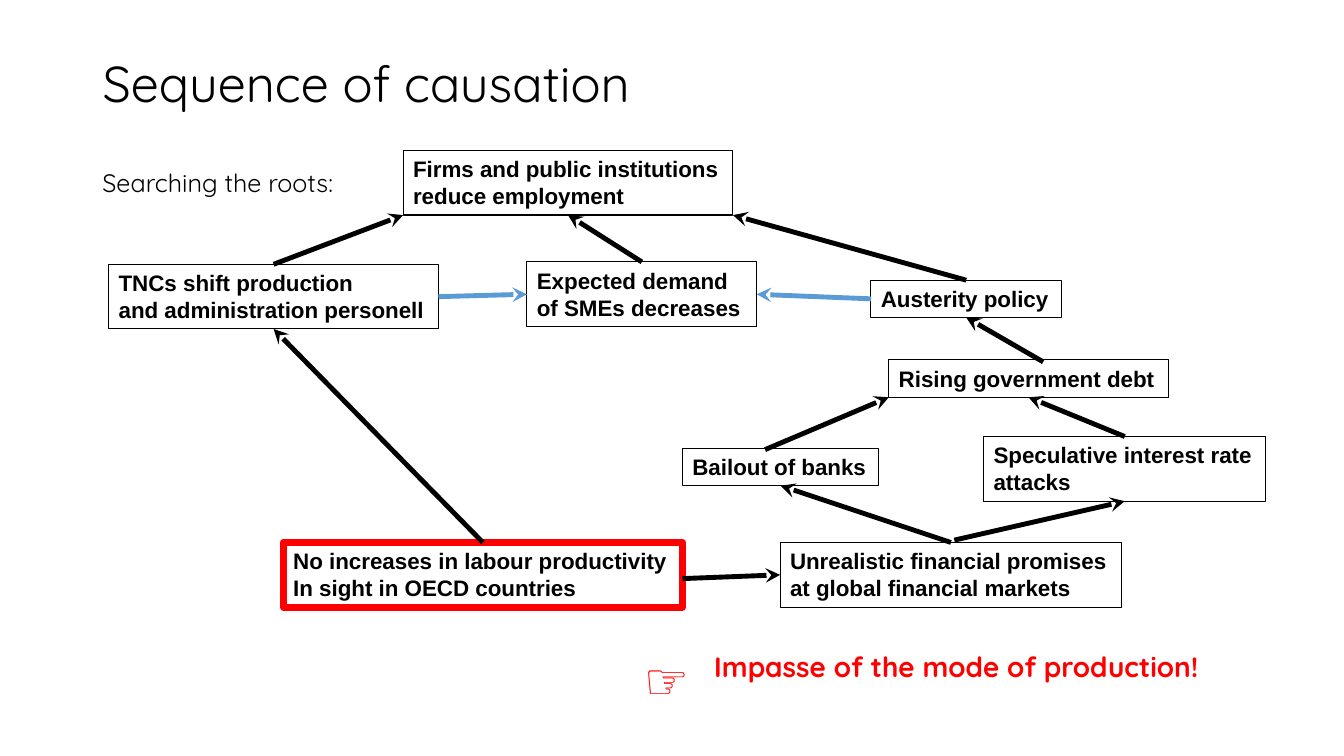
from lxml.etree import SubElement
from pptx import Presentation
from pptx.dml.color import RGBColor
from pptx.enum.shapes import MSO_CONNECTOR, MSO_SHAPE
from pptx.enum.text import MSO_ANCHOR, MSO_AUTO_SIZE, PP_ALIGN
from pptx.oxml.ns import qn
from pptx.util import Cm, Pt

TOP, LEFT, BOTTOM, RIGHT = range(4)
BLACK, RED, BLUE = "000000", "FF0000", "5B9BD5"
BOX_HEIGHT = {1: 0.94, 2: 1.63}

BOXES = {
    "firms": (10.16, 3.79, 8.31, ["Firms and public institutions", "reduce employment"]),
    "demand": (13.28, 6.6, 5.79, ["Expected demand", "of SMEs decreases"]),
    "austerity": (21.95, 7.06, 4.8, ["Austerity policy"]),
    "shift": (2.74, 6.66, 8.31, ["TNCs shift production", "and administration personell"]),
    "bailout": (17.2, 11.3, 4.95, ["Bailout of banks"]),
    "debt": (22.4, 9.07, 7.04, ["Rising government debt"]),
    "attacks": (24.79, 11, 7.11, ["Speculative interest rate", "attacks"]),
    "promises": (19.66, 13.67, 8.61, ["Unrealistic financial promises", "at global financial markets"]),
    "labour": (7.14, 13.67, 10.06, ["No increases in labour productivity", "In sight in OECD countries"]),
}

ARROWS = [
    (("shift", TOP), (10.16, 5.42), BLACK),
    ((17.2, 14.58), ("promises", LEFT), BLACK),
    (("promises", TOP), ("bailout", BOTTOM), BLACK),
    ((24.05, 13.61), ("attacks", BOTTOM), BLACK),
    (("attacks", TOP), ("debt", BOTTOM), BLACK),
    ((19.28, 11.33), (22.4, 10.01), BLACK),
    ((26.29, 9.12), ("austerity", BOTTOM), BLACK),
    (("austerity", TOP), (18.47, 5.42), BLACK),
    (("demand", TOP), ("firms", BOTTOM), BLACK),
    (("labour", TOP), ("shift", BOTTOM), BLACK),
    (("shift", RIGHT), ("demand", LEFT), BLUE),
    (("austerity", LEFT), ("demand", RIGHT), BLUE),
]


def rgb(color):
    return RGBColor.from_string(color)


class CausationSlide:
    title_font = "Quicksand"
    box_font = "Arial"

    def __init__(self, prs):
        self.s = prs.slides.add_slide(prs.slide_layouts[5])
        self.boxes = {}

    def add_lines(self, tf, lines, font, size, color=BLACK, bold=False):
        for i, line in enumerate(lines):
            p = tf.paragraphs[0] if i == 0 else tf.add_paragraph()
            p.alignment = PP_ALIGN.LEFT
            r = p.add_run()
            r.text = line
            r.font.name = font
            r.font.size = Pt(size)
            r.font.bold = bold
            r.font.color.rgb = rgb(color)

    def title(self, text, x, y, w, h):
        sp = self.s.shapes.title
        sp.left, sp.top, sp.width, sp.height = Cm(x), Cm(y), Cm(w), Cm(h)
        tf = sp.text_frame
        tf.auto_size = MSO_AUTO_SIZE.NONE
        tf.vertical_anchor = MSO_ANCHOR.MIDDLE
        self.add_lines(tf, [text], self.title_font, 36)
        tf.paragraphs[0].line_spacing = 0.9

    def label(self, text, x, y, w, h, size, color=BLACK, bold=False, wrap=False):
        tf = self.s.shapes.add_textbox(Cm(x), Cm(y), Cm(w), Cm(h)).text_frame
        tf.word_wrap = wrap
        tf.auto_size = MSO_AUTO_SIZE.SHAPE_TO_FIT_TEXT
        self.add_lines(tf, [text], self.title_font, size, color, bold)

    def box(self, name, x, y, w, lines, color=BLACK, weight=0.75):
        h = BOX_HEIGHT[len(lines)]
        sp = self.s.shapes.add_shape(MSO_SHAPE.RECTANGLE, Cm(x), Cm(y), Cm(w), Cm(h))
        sp.shadow.inherit = False
        sp.fill.background()
        sp.line.color.rgb = rgb(color)
        sp.line.width = Pt(weight)
        tf = sp.text_frame
        tf.word_wrap = False
        tf.auto_size = MSO_AUTO_SIZE.SHAPE_TO_FIT_TEXT
        tf.vertical_anchor = MSO_ANCHOR.TOP
        self.add_lines(tf, lines, self.box_font, 16, bold=True)
        self.boxes[name] = sp

    def arrow(self, start, end, color):
        cxn = self.s.shapes.add_connector(MSO_CONNECTOR.STRAIGHT, 0, 0, 0, 0)
        if start[0] in self.boxes:
            cxn.begin_connect(self.boxes[start[0]], start[1])
        else:
            cxn.begin_x, cxn.begin_y = Cm(start[0]), Cm(start[1])
        if end[0] in self.boxes:
            cxn.end_connect(self.boxes[end[0]], end[1])
        else:
            cxn.end_x, cxn.end_y = Cm(end[0]), Cm(end[1])
        cxn.line.color.rgb = rgb(color)
        cxn.line.width = Pt(3.5)
        props = cxn._element.spPr
        SubElement(props.find(qn("a:ln")), qn("a:tailEnd"), type="stealth")
        SubElement(props, qn("a:effectLst"))


def main():
    prs = Presentation()
    prs.slide_width, prs.slide_height = Cm(33.87), Cm(19.05)
    slide = CausationSlide(prs)
    slide.title("Sequence of causation", 2.33, 1.01, 29.21, 2.34)
    slide.label("Searching the roots:", 2.33, 4.09, 6.81, 1.03, 18)
    for name, (x, y, w, lines) in BOXES.items():
        color, weight = (RED, 5) if name == "labour" else (BLACK, 0.75)
        slide.box(name, x, y, w, lines, color, weight)
    for start, end, color in ARROWS:
        slide.arrow(start, end, color)
    slide.label("Impasse of the mode of production!", 17.75, 16.23, 14.15, 1.11, 20, RED, True, True)
    slide.label("☞", 15.98, 16.23, 1.73, 1.8, 36, RED, True)
    prs.save("out.pptx")


if __name__ == "__main__":
    main()
